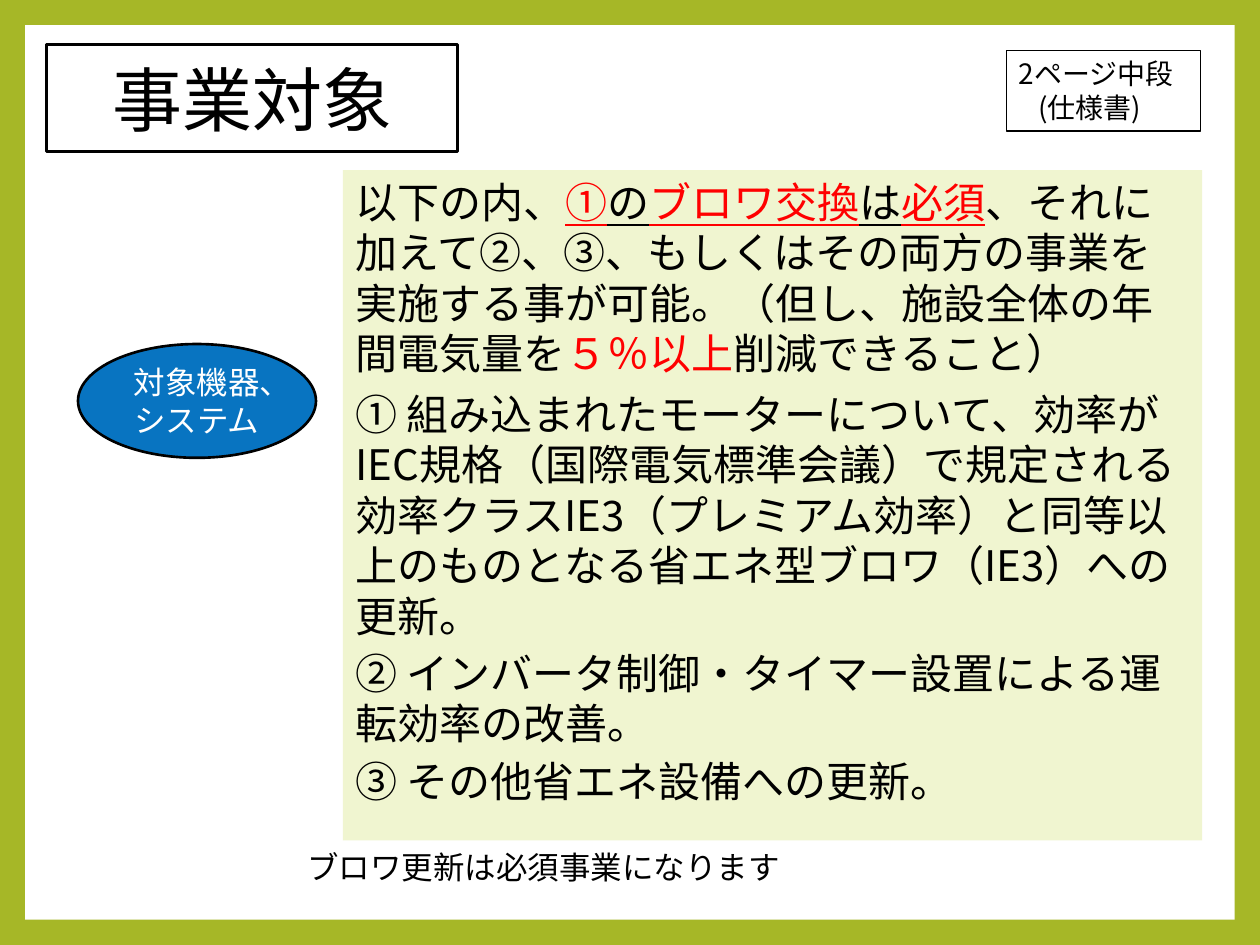
import pptx
import pptx.util
import pptx.dml.color
import pptx.enum.shapes
import pptx.enum.text
import pptx.oxml.ns
import lxml.etree

Pt = pptx.util.Pt
RGBColor = pptx.dml.color.RGBColor
SHAPE = pptx.enum.shapes.MSO_SHAPE
ANCHOR = pptx.enum.text.MSO_ANCHOR
ALIGN = pptx.enum.text.PP_ALIGN
qn = pptx.oxml.ns.qn

FONT = "Noto Sans CJK JP"
GREEN = RGBColor(0xA6, 0xB7, 0x27)
PALE = RGBColor(0xF0, 0xF5, 0xD0)
BLUE = RGBColor(0x00, 0x70, 0xC0)
RED = RGBColor(0xFF, 0x00, 0x00)
BLACK = RGBColor(0x00, 0x00, 0x00)
WHITE = RGBColor(0xFF, 0xFF, 0xFF)


def add_span(para, text, size, color=BLACK, underline=False):
    span = para.add_run()
    span.text = text
    span.font.size = Pt(size)
    span.font.color.rgb = color
    span.font.underline = underline
    span.font.name = FONT
    lxml.etree.SubElement(span.font._element, qn("a:ea"), typeface=FONT)
    para.line_spacing = Pt(size * 1.2)


def style_box(box, fill, line_width, anchor, align):
    if fill is None:
        box.fill.background()
    else:
        box.fill.solid()
        box.fill.fore_color.rgb = fill
    if line_width:
        box.line.color.rgb = BLACK
        box.line.width = Pt(line_width)
    else:
        box.line.fill.background()
    box.text_frame.word_wrap = True
    box.text_frame.vertical_anchor = anchor
    box.text_frame.paragraphs[0].alignment = align


deck = pptx.Presentation()
deck.slide_width = Pt(720)
deck.slide_height = Pt(540)
page = deck.slides.add_slide(deck.slide_layouts[5])
page.background.fill.solid()
page.background.fill.fore_color.rgb = GREEN

panel = page.shapes.add_shape(SHAPE.RECTANGLE, Pt(14.4), Pt(14.4), Pt(691.2), Pt(511.2))
panel.shadow.inherit = False
style_box(panel, WHITE, 0, ANCHOR.MIDDLE, ALIGN.LEFT)

title = page.shapes.title
title._element.addprevious(panel._element)
title.left, title.top, title.width, title.height = Pt(26.6), Pt(25.6), Pt(235), Pt(61)
outline = lxml.etree.SubElement(title._element.spPr, qn("a:prstGeom"), prst="roundRect")
lxml.etree.SubElement(outline, qn("a:avLst"))
style_box(title, WHITE, 1.5, ANCHOR.MIDDLE, ALIGN.CENTER)
add_span(title.text_frame.paragraphs[0], "事業対象", 40)

target = page.shapes.add_shape(SHAPE.OVAL, Pt(44.6), Pt(196.6), Pt(136), Pt(65))
target.shadow.inherit = False
style_box(target, BLUE, 1.5, ANCHOR.MIDDLE, ALIGN.CENTER)
fill_color = target._element.spPr.find(qn("a:solidFill"))[0]
lxml.etree.SubElement(fill_color, qn("a:alpha"), val="97000")
add_span(target.text_frame.paragraphs[0], "対象機器、システム", 18, WHITE)

details = page.shapes.add_shape(SHAPE.RECTANGLE, Pt(196), Pt(97.2), Pt(491), Pt(383))
details.shadow.inherit = False
style_box(details, PALE, 0, ANCHOR.TOP, ALIGN.LEFT)
intro = details.text_frame.paragraphs[0]
for text, color, underline in [
    ("以下の内、", BLACK, False),
    ("①", RED, True),
    ("の", BLACK, True),
    ("ブロワ交換", RED, True),
    ("は", BLACK, True),
    ("必須", RED, True),
    ("、それに加えて②、③、もしくはその両方の事業を実施する事が可能。（但し、施設全体の年間電気量を", BLACK, False),
    ("５％以上", RED, False),
    ("削減できること）", BLACK, False),
]:
    add_span(intro, text, 24, color, underline)
for text, gap in [
    ("① 組み込まれたモーターについて、効率がIEC規格（国際電気標準会議）で規定される効率クラスIE3（プレミアム効率）と同等以上のものとなる省エネ型ブロワ（IE3）への更新。", 6),
    ("② インバータ制御・タイマー設置による運転効率の改善。", 4),
    ("③ その他省エネ設備への更新。", 4),
]:
    para = details.text_frame.add_paragraph()
    para.alignment = ALIGN.LEFT
    para.space_before = Pt(gap)
    add_span(para, text, 24)

reference = page.shapes.add_shape(SHAPE.RECTANGLE, Pt(575.2), Pt(28.8), Pt(111), Pt(46))
reference.shadow.inherit = False
style_box(reference, None, 0.75, ANCHOR.TOP, ALIGN.LEFT)
add_span(reference.text_frame.paragraphs[0], "2ページ中段", 16)
para = reference.text_frame.add_paragraph()
para.alignment = ALIGN.LEFT
para._p.get_or_add_pPr().set("marL", str(Pt(11)))
add_span(para, "(仕様書)", 16)

note = page.shapes.add_textbox(Pt(168.5), Pt(481), Pt(314.6), Pt(29))
note.text_frame.word_wrap = True
add_span(note.text_frame.paragraphs[0], "ブロワ更新は必須事業になります", 18)

deck.save("out.pptx")
